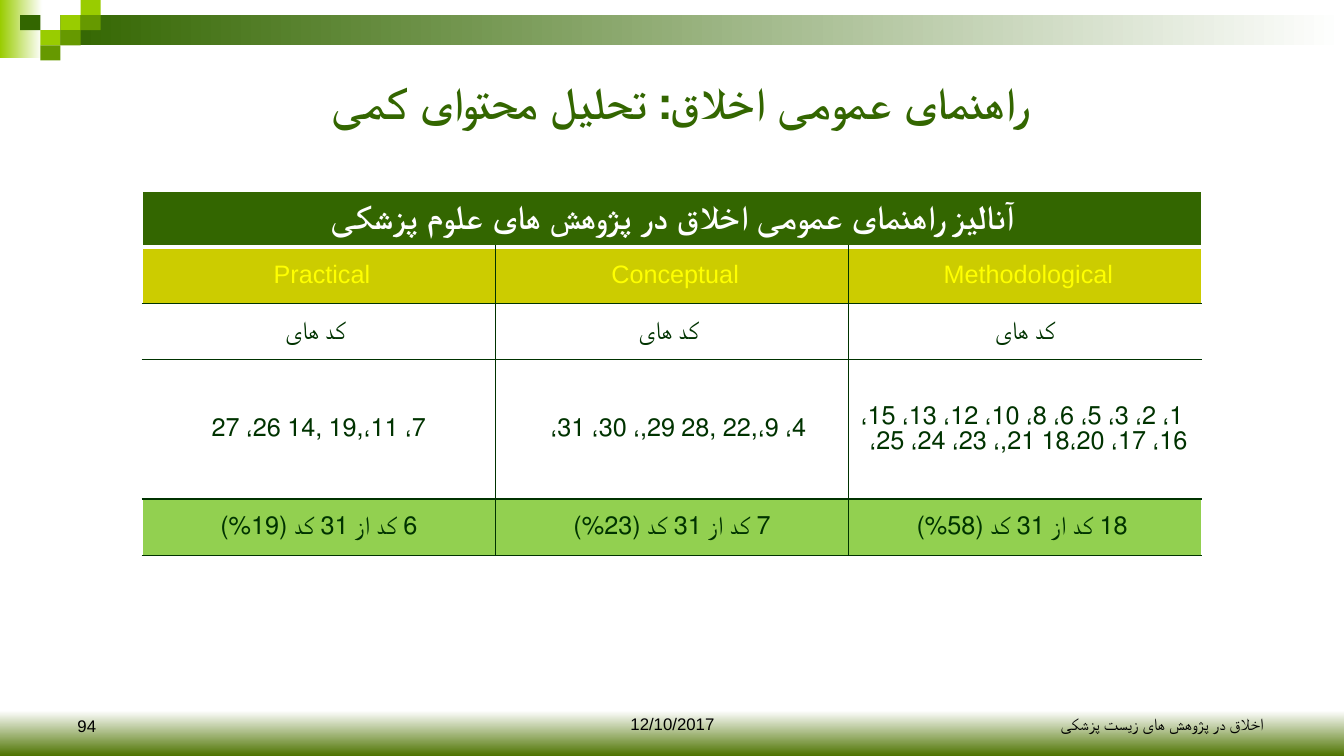
from lxml import etree
from pptx import Presentation
from pptx.dml.color import RGBColor
from pptx.enum.shapes import MSO_SHAPE
from pptx.enum.text import MSO_ANCHOR, PP_ALIGN
from pptx.oxml.ns import qn
from pptx.util import Inches, Pt

RECT = MSO_SHAPE.RECTANGLE
MID, LOW = MSO_ANCHOR.MIDDLE, MSO_ANCHOR.BOTTOM
LEFT, MIDDLE, RIGHT = PP_ALIGN.LEFT, PP_ALIGN.CENTER, PP_ALIGN.RIGHT

DARK, GREEN, LIME = "336600", "669900", "99CC00"
WHITE, BLACK, INK = "FFFFFF", "000000", "003300"

TITLE = "راهنمای عمومی اخلاق: تحلیل محتوای کمی "
HEAD = "آنالیز راهنمای عمومی اخلاق در پژوهش های علوم پزشکی"
ROWS = [
    (0.55, DARK, WHITE, [HEAD, "", ""]),
    (0.56, "CCCC00", "FFFF00", ["Practical ", "Conceptual ", "Methodological "]),
    (0.56, WHITE, INK, [" کد های", " کد های", "کد های"]),
    (1.38, WHITE, INK, [
        "7، 11،,19 ,14 26، 27",
        "4، 9،,22 ,28 29,، 30، 31،  ",
        " 1، 2، 3، 5، 6، 8، 10، 12، 13، 15، 16، 17، 18،20 21,، 23، 24، 25، ",
    ]),
    (0.56, "92D050", INK, [
        "6 کد از 31 کد (19%)", "7 کد از 31 کد (23%)", " 18 کد از 31 کد (58%)",
    ]),
]
FOOT = [
    ("12/10/2017", 4.56, 4.22, 0.5, MIDDLE, "Arial"),
    ("اخلاق در پژوهش های زیست پزشکی ", 9.56, 3.11, 0.5, RIGHT, "Montserrat"),
    ("94", 0.67, 3.11, 0.52, LEFT, "Arial"),
]
BANDS = [(0, 0, 0.42, 0.58, LIME), (0.6, 0.15, 12.73, 0.3, DARK)]
TILE_W, TILE_H = 0.2, 0.15
TILES = [(3, 1, LIME), (4, 0, LIME), (4, 1, GREEN), (2, 2, LIME),
         (1, 1, DARK), (3, 2, GREEN), (2, 3, GREEN)]


def rgb(code):
    return RGBColor.from_string(code)


def blend(fill, stops, angle):
    fill.gradient()
    fill.gradient_angle = angle
    for stop, (place, code) in zip(fill.gradient_stops, stops):
        stop.position = place
        stop.color.rgb = rgb(code)


def block(x, y, w, h):
    box = slide.shapes.add_shape(RECT, Inches(x), Inches(y), Inches(w), Inches(h))
    box.shadow.inherit = False
    box.line.fill.background()
    return box.fill


def write(frame, text, size, code, align, face="Arial", bold=False, rtl=False):
    frame.text = text
    para = frame.paragraphs[0]
    para.alignment = align
    font = para.font
    font.size, font.name, font.bold = Pt(size), face, bold
    font.color.rgb = rgb(code)
    if rtl:
        para._p.get_or_add_pPr().set("rtl", "1")


def border(cell, sides):
    props = cell._tc.get_or_add_tcPr()
    for spot, (tag, (code, width)) in enumerate(sides.items()):
        line = etree.Element(qn("a:" + tag), w=str(Pt(width)))
        fill = etree.SubElement(line, qn("a:solidFill"))
        etree.SubElement(fill, qn("a:srgbClr"), val=code)
        props.insert(spot, line)


deck = Presentation()
deck.slide_width, deck.slide_height = Inches(13.33), Inches(7.5)
slide = deck.slides.add_slide(deck.slide_layouts[5])
blend(slide.background.fill, [(0.94, WHITE), (1, "4D7300")], 270)

for x, y, w, h, code in BANDS:
    blend(block(x, y, w, h), [(0, code), (1, WHITE)], 0)
for col, row, code in TILES:
    fill = block(col * TILE_W, row * TILE_H, TILE_W, TILE_H)
    fill.solid()
    fill.fore_color.rgb = rgb(code)

title = slide.shapes.title
title.left, title.top = Inches(0.67), Inches(0.5)
title.width, title.height = Inches(12), Inches(1.01)
title.text_frame.vertical_anchor = MID
write(title.text_frame, TITLE, 32, DARK, MIDDLE, bold=True, rtl=True)

for text, x, w, h, align, face in FOOT:
    box = slide.shapes.add_textbox(Inches(x), Inches(6.83), Inches(w), Inches(h))
    box.text_frame.word_wrap = True
    box.text_frame.vertical_anchor = LOW
    write(box.text_frame, text, 12, BLACK, align, face)

high = sum(row[0] for row in ROWS)
table = slide.shapes.add_table(
    len(ROWS), 3, Inches(1.41), Inches(1.9), Inches(10.51), Inches(high)).table
table.cell(0, 0).merge(table.cell(0, 2))
thin, edge, rule = (INK, 1), (WHITE, 1), (WHITE, 3)
for r, (tall, back, code, texts) in enumerate(ROWS):
    table.rows[r].height = Inches(tall)
    top = r == 0
    for c, text in enumerate(texts):
        cell = table.cell(r, c)
        cell.vertical_anchor = MID
        cell.fill.solid()
        cell.fill.fore_color.rgb = rgb(back)
        border(cell, {
            "lnL": edge if top or c == 0 else thin,
            "lnR": edge if top or c == 2 else thin,
            "lnT": edge if top else rule if r == 1 else thin,
            "lnB": rule if top else thin,
        })
        if text:
            write(cell.text_frame, text, 24 if top else 18, code, MIDDLE,
                  bold=top, rtl=True)

deck.save("out.pptx")
